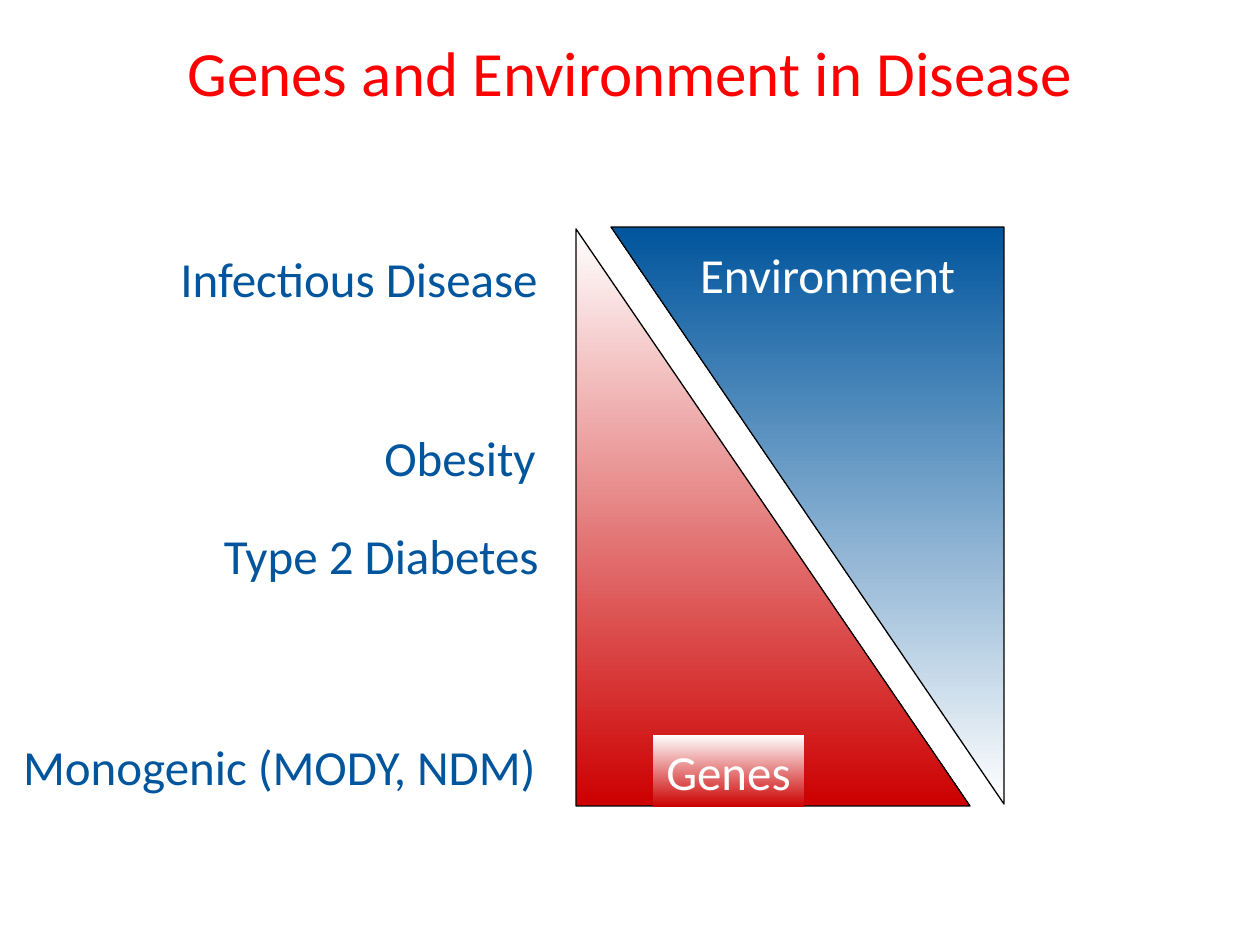
"""Build a slide that weighs genes against environment across diseases."""
from dataclasses import dataclass

from pptx import Presentation
from pptx.dml.color import RGBColor
from pptx.enum.shapes import MSO_SHAPE
from pptx.enum.text import MSO_ANCHOR, MSO_AUTO_SIZE, PP_ALIGN
from pptx.util import Emu, Pt


@dataclass(frozen=True)
class Theme:
    font: str = "Calibri"
    head: int = 36
    body: int = 28
    title: str = "FF0000"
    blue: str = "00559D"
    red: str = "CC0000"
    white: str = "FFFFFF"
    black: str = "000000"


THEME = Theme()
TITLE = ("Genes and Environment in Disease", (0, 29, 1260, 84))
LABELS = [
    ("Monogenic (MODY, NDM)", (4, 730, 544, 72), False),
    ("Type 2 Diabetes", (44, 519, 507, 72), True),
    ("Obesity", (234, 421, 314, 72), True),
    ("Infectious Disease", (35, 242, 515, 72), True),
]
WEDGES = [
    ((611, 227, 393, 577), 180, THEME.blue),
    ((576, 229, 394, 577), 0, THEME.red),
]
ENV = ("Environment", (661, 238, 333, 72))
GENES = ("Genes", (653, 735, 151, 72))


def scale(box):
    return [Emu(round(px * 914400 / 126)) for px in box]


def write(shape, text, size, color, align, wrap=True):
    frame = shape.text_frame
    frame.word_wrap = wrap
    frame.auto_size = MSO_AUTO_SIZE.SHAPE_TO_FIT_TEXT
    frame.vertical_anchor = MSO_ANCHOR.TOP
    para = frame.paragraphs[0]
    para.text = text
    para.alignment = align
    para.font.name = THEME.font
    para.font.size = Pt(size)
    para.font.color.rgb = RGBColor.from_string(color)
    return frame


def label(slide, text, box, color, align, size=THEME.body, wrap=True):
    shape = slide.shapes.add_textbox(*scale(box))
    return write(shape, text, size, color, align, wrap)


def fade(slide, kind, box, color):
    shape = slide.shapes.add_shape(kind, *scale(box))
    shape.shadow.inherit = False
    shape.fill.gradient()
    shape.fill.gradient_angle = 270
    for stop, tone in zip(shape.fill.gradient_stops, (THEME.white, color)):
        stop.color.rgb = RGBColor.from_string(tone)
    shape.line.fill.background()
    return shape


def wedge(slide, box, turn, color):
    shape = fade(slide, MSO_SHAPE.RIGHT_TRIANGLE, box, color)
    shape.rotation = turn
    shape.line.color.rgb = RGBColor.from_string(THEME.black)
    shape.line.width = Pt(0.75)


def main():
    deck = Presentation()
    deck.slide_width, deck.slide_height = scale((1260, 945))
    slide = deck.slides.add_slide(deck.slide_layouts[6])

    head = label(slide, *TITLE, THEME.title, PP_ALIGN.CENTER, THEME.head)
    head.auto_size = MSO_AUTO_SIZE.NONE
    head.vertical_anchor = MSO_ANCHOR.MIDDLE
    for text, box, wrap in LABELS:
        label(slide, text, box, THEME.blue, PP_ALIGN.RIGHT, wrap=wrap)

    upper, lower = WEDGES
    wedge(slide, *upper)
    label(slide, *ENV, THEME.white, PP_ALIGN.CENTER)
    wedge(slide, *lower)
    text, box = GENES
    tag = fade(slide, MSO_SHAPE.RECTANGLE, box, THEME.red)
    write(tag, text, THEME.body, THEME.white, PP_ALIGN.CENTER, wrap=False)

    deck.save("out.pptx")


if __name__ == "__main__":
    main()
